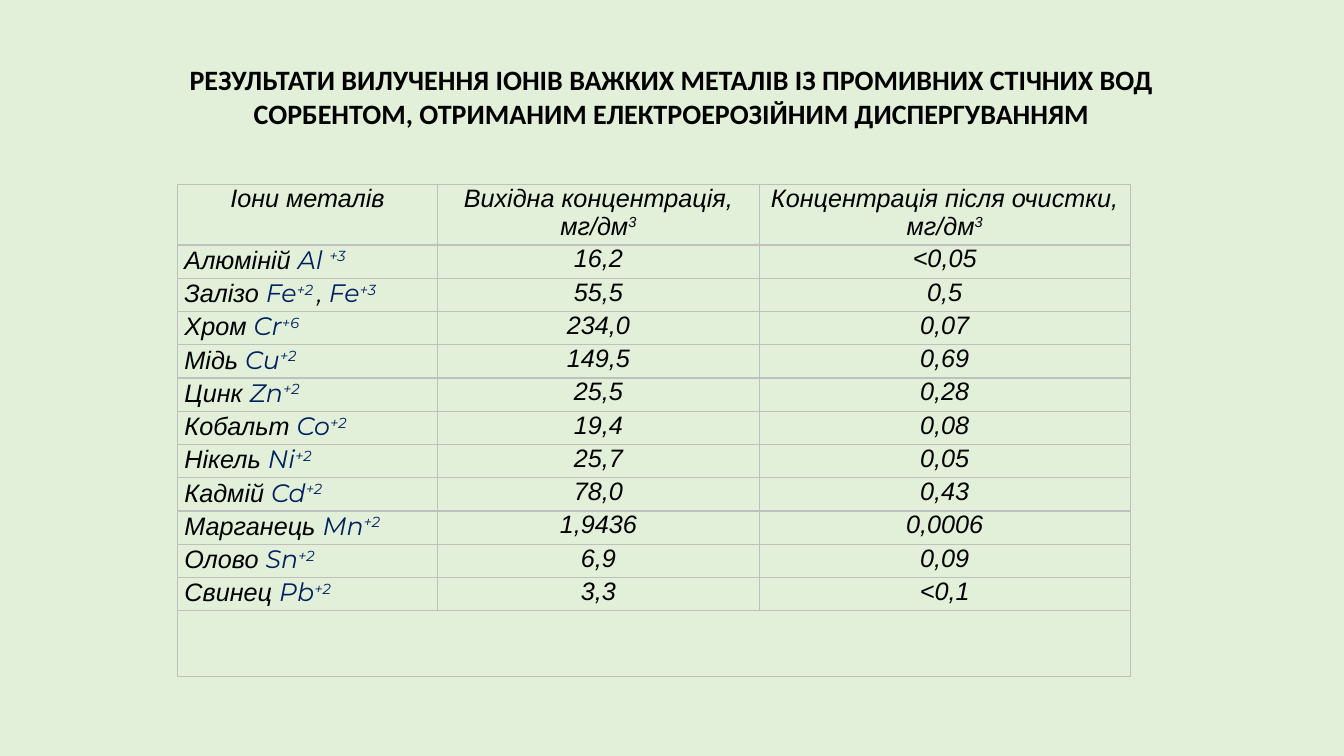
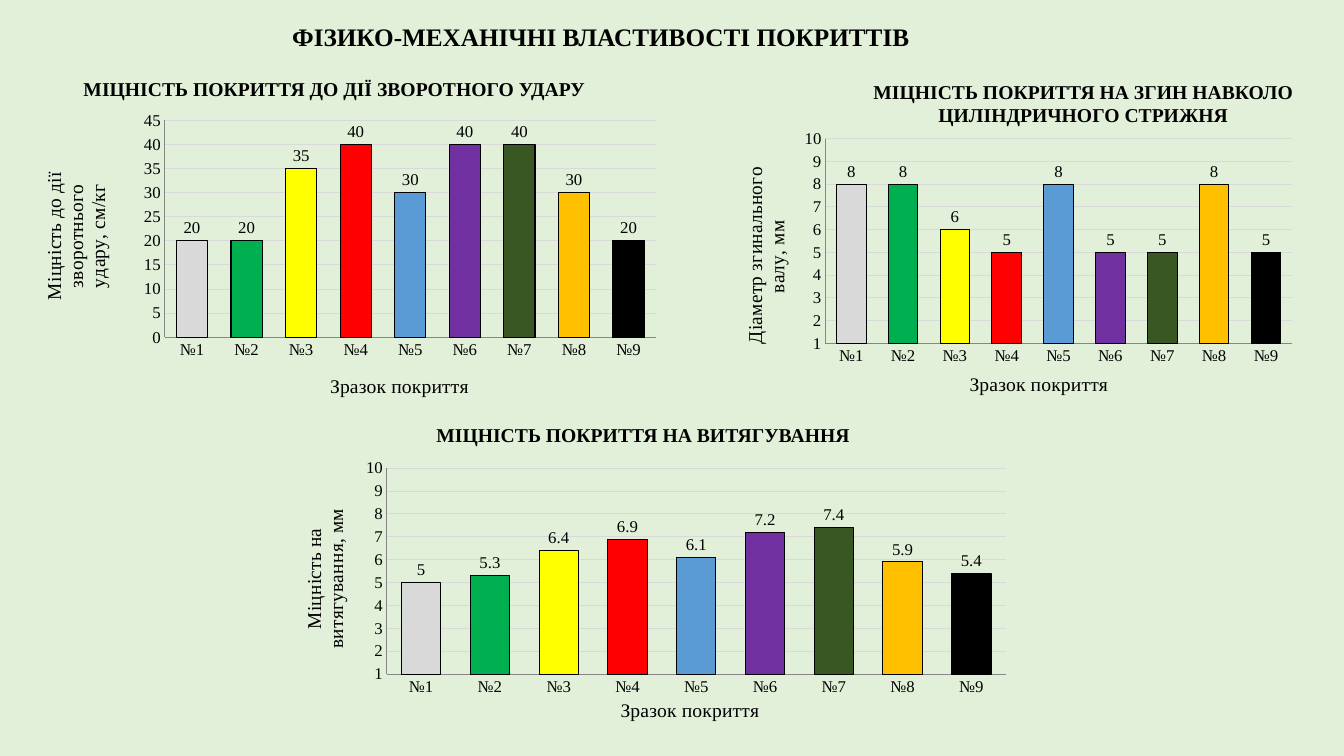
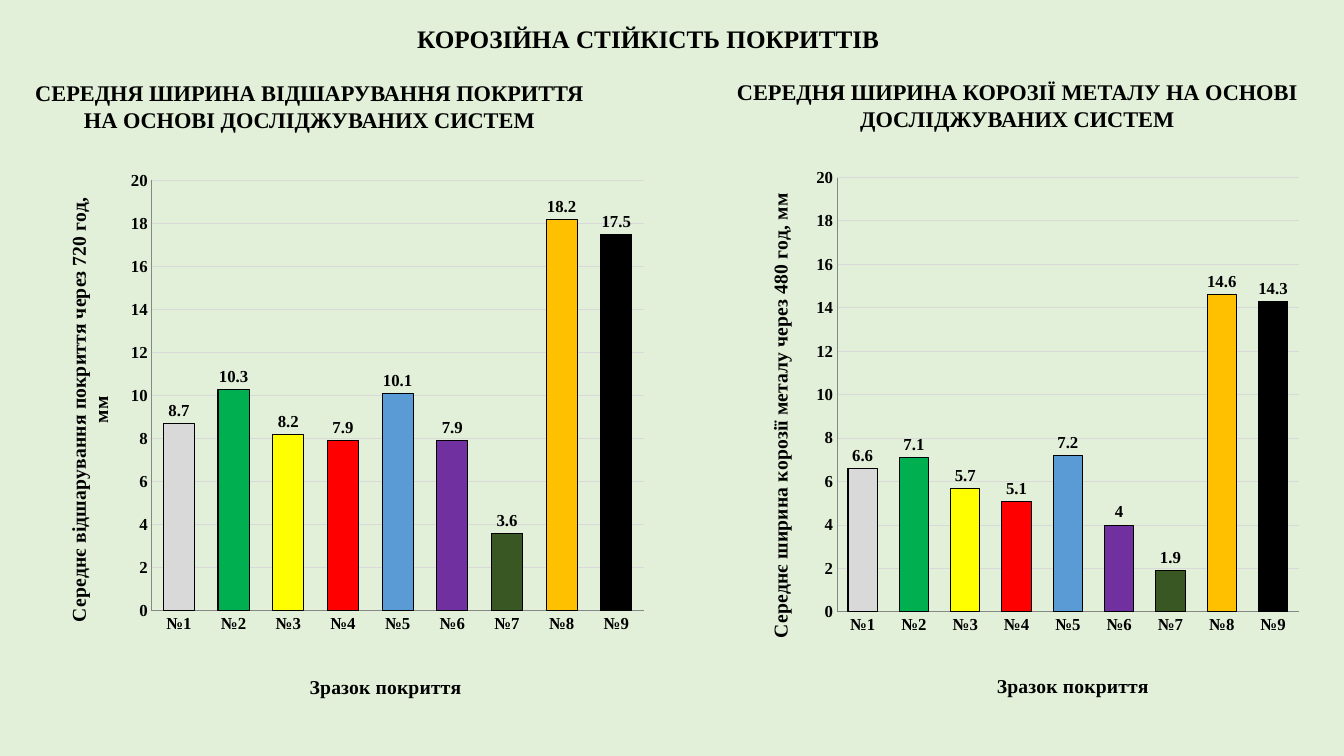
"""Build three slides on sorbent purification and coating properties."""
from dataclasses import dataclass
from typing import Optional

from lxml import etree
from pptx import Presentation
from pptx import util as u
from pptx.chart.data import CategoryChartData
from pptx.dml.color import RGBColor
from pptx.enum import chart as ch, text
from pptx.oxml.ns import qn

COLORS = {
    "back": "E2F0D9",
    "ink": "000000",
    "ion": "002060",
    "border": "BFBFBF",
    "grid": "D9D9D9",
}
SAMPLE_COLORS = {
    "№1": "D9D9D9",
    "№2": "00B050",
    "№3": "FFFF00",
    "№4": "FF0000",
    "№5": "5B9BD5",
    "№6": "7030A0",
    "№7": "385723",
    "№8": "FFC000",
    "№9": "000000",
}
SERIF = "Times New Roman"
CENTER = text.PP_ALIGN.CENTER
LEFT = text.PP_ALIGN.LEFT


@dataclass
class Metal:
    """One table row: a metal, its ions and both concentrations."""
    name: str
    ions: list[tuple[str, str]]
    before: str
    after: str


@dataclass
class Label:
    """A bold text box; lines become paragraphs."""
    box: tuple[float, float, float, float]
    lines: list[str]
    size: int
    align: text.PP_ALIGN = LEFT
    font: str = SERIF


@dataclass
class Bars:
    """A column chart; title places are in slide inches."""
    box: tuple[float, float, float, float]
    values: list[float]
    plot: tuple[float, float, float, float]
    y_title: str
    x_at: tuple[float, float]
    y_at: tuple[float, float]
    top: int
    step: int
    low: Optional[int] = None
    bold: bool = False


METALS = [
    Metal("Алюміній", [("Al ", "+3")], "16,2", "<0,05"),
    Metal("Залізо", [("Fe", "+2 "), ("Fe", "+3")], "55,5", "0,5"),
    Metal("Хром", [("Cr", "+6")], "234,0", "0,07"),
    Metal("Мідь", [("Cu", "+2")], "149,5", "0,69"),
    Metal("Цинк", [("Zn", "+2")], "25,5", "0,28"),
    Metal("Кобальт", [("Co", "+2")], "19,4", "0,08"),
    Metal("Нікель", [("Ni", "+2")], "25,7", "0,05"),
    Metal("Кадмій", [("Cd", "+2")], "78,0", "0,43"),
    Metal("Марганець", [("Mn", "+2")], "1,9436", "0,0006"),
    Metal("Олово", [("Sn", "+2")], "6,9", "0,09"),
    Metal("Свинец", [("Pb", "+2")], "3,3", "<0,1"),
]

TABLE_TITLE = Label(
    (0.97, 0.57, 11.38, 0.77),
    ["РЕЗУЛЬТАТИ ВИЛУЧЕННЯ ІОНІВ ВАЖКИХ МЕТАЛІВ ІЗ ПРОМИВНИХ СТІЧНИХ ВОД",
     "СОРБЕНТОМ, ОТРИМАНИМ ЕЛЕКТРОЕРОЗІЙНИМ ДИСПЕРГУВАННЯМ"],
    20, CENTER, "Calibri")

STRENGTH = [
    Bars((0.23, 1.07, 6.47, 2.93), [20, 20, 35, 40, 30, 40, 40, 30, 20],
         (0.217, 0.043, 0.753, 0.744), "Міцність до дії зворотнього\nудару, см/кг",
         (3.24, 3.7), (0.38, 1.7), 45, 5),
    Label((0.73, 0.71, 6.06, 0.34), ["МІЦНІСТЬ ПОКРИТТЯ ДО ДІЇ ЗВОРОТНОГО УДАРУ"], 14),
    Bars((6.99, 1.24, 6.01, 2.74), [8, 8, 6, 5, 8, 5, 5, 8, 5],
         (0.199, 0.051, 0.77, 0.756), "Діаметр згинального\nвалу, мм",
         (9.58, 3.7), (7.33, 1.67), 10, 1, 1),
    Label((7.06, 0.74, 7.37, 0.57),
          ["МІЦНІСТЬ ПОКРИТТЯ НА ЗГИН НАВКОЛО", "ЦИЛІНДРИЧНОГО СТРИЖНЯ"], 14, CENTER),
    Bars((2.74, 4.51, 7.46, 2.71), [5, 5.3, 6.4, 6.9, 6.1, 7.2, 7.4, 5.9, 5.4],
         (0.147, 0.051, 0.823, 0.77), "Міцність на витягування, мм",
         (6.12, 6.94), (2.95, 5.05), 10, 1, 1),
    Label((4.23, 4.15, 5.34, 0.34), ["МІЦНІСТЬ ПОКРИТТЯ НА ВИТЯГУВАННЯ"], 14),
    Label((2.8, 0.16, 8.04, 0.4), ["ФІЗИКО-МЕХАНІЧНІ ВЛАСТИВОСТІ ПОКРИТТІВ"], 18),
]

CORROSION = [
    Bars((0.23, 1.51, 6.16, 5.51), [8.7, 10.3, 8.2, 7.9, 10.1, 7.9, 3.6, 18.2, 17.5],
         (0.207, 0.051, 0.793, 0.775), "Середнє відшарування покриття через 720 год, мм",
         (3.04, 6.65), (0.62, 1.92), 20, 2, 0, True),
    Label((0.24, 0.74, 5.66, 0.64),
          ["СЕРЕДНЯ ШИРИНА ВІДШАРУВАННЯ ПОКРИТТЯ НА ОСНОВІ ДОСЛІДЖУВАНИХ СИСТЕМ"],
          16, CENTER),
    Bars((7.12, 1.47, 5.94, 5.71), [6.6, 7.1, 5.7, 5.1, 7.2, 4, 1.9, 14.6, 14.3],
         (0.199, 0.051, 0.771, 0.755), "Середнє ширина корозії металу через 480 год, мм",
         (9.85, 6.65), (7.58, 1.88), 20, 2, 0, True),
    Label((7.08, 0.73, 6.02, 0.64),
          ["СЕРЕДНЯ ШИРИНА КОРОЗІЇ МЕТАЛУ НА ОСНОВІ ДОСЛІДЖУВАНИХ СИСТЕМ"], 16, CENTER),
    Label((4.04, 0.18, 8.04, 0.4), ["КОРОЗІЙНА СТІЙКІСТЬ ПОКРИТТІВ"], 18),
]


def rgb(name: str) -> RGBColor:
    """Return a named palette colour."""
    return RGBColor.from_string(COLORS[name])


def set_font(font, size: float, name: str = SERIF, color: str = "ink",
             bold: bool = False, italic: bool = False) -> None:
    """Apply one character format."""
    font.size = u.Pt(size)
    font.name = name
    font.bold = bold
    font.italic = italic
    font.color.rgb = rgb(color)


def write(p, words: str, sup: bool = False, **fmt) -> None:
    """Add a formatted run to a paragraph."""
    r = p.add_run()
    r.text = words
    set_font(r.font, **fmt)
    if sup:
        r._r.get_or_add_rPr().set("baseline", "30000")


def write_lines(tf, lines: list[str], align: text.PP_ALIGN, **fmt) -> None:
    """Fill a text frame with one paragraph per line."""
    for i, line in enumerate(lines):
        p = tf.add_paragraph() if i else tf.paragraphs[0]
        p.alignment = align
        write(p, line, **fmt)


def draw_label(s, label: Label) -> None:
    """Draw a bold text box."""
    tf = s.shapes.add_textbox(*map(u.Inches, label.box)).text_frame
    tf.word_wrap = True
    tf.auto_size = text.MSO_AUTO_SIZE.SHAPE_TO_FIT_TEXT
    write_lines(tf, label.lines, label.align, size=label.size, name=label.font, bold=True)


def set_layout(parent, index: int, **places) -> None:
    """Give a chart part a manual layout."""
    for old in parent.findall(qn("c:layout")):
        parent.remove(old)
    layout = etree.Element(qn("c:layout"))
    manual = etree.SubElement(layout, qn("c:manualLayout"))
    for tag, val in places.items():
        etree.SubElement(manual, qn(f"c:{tag}")).set("val", str(val))
    parent.insert(index, layout)


def style_axis(axis, title: str, at: tuple[float, float], bars: Bars) -> None:
    """Format an axis and place its title."""
    axis.major_tick_mark = axis.minor_tick_mark = ch.XL_TICK_MARK.NONE
    set_font(axis.tick_labels.font, 12, bold=bars.bold)
    write_lines(axis.axis_title.text_frame, title.split("\n"), CENTER, size=14, bold=bars.bold)
    left, top, width, height = bars.box
    set_layout(axis.axis_title.element, 1, xMode="edge", yMode="edge",
               x=round((at[0] - left) / width, 3), y=round((at[1] - top) / height, 3))


def draw_bars(s, bars: Bars) -> None:
    """Draw a column chart with one colour per sample."""
    data = CategoryChartData()
    data.categories = list(SAMPLE_COLORS)
    data.add_series("Series 1", bars.values)
    chart = s.shapes.add_chart(ch.XL_CHART_TYPE.COLUMN_CLUSTERED,
                               *map(u.Inches, bars.box), data).chart
    chart.has_title = chart.has_legend = False
    set_font(chart.font, 10, "Calibri")
    style_axis(chart.category_axis, "Зразок покриття", bars.x_at, bars)

    axis = chart.value_axis
    style_axis(axis, bars.y_title, bars.y_at, bars)
    body = axis.axis_title.element.find(".//" + qn("a:bodyPr"))
    body.set("rot", "-5400000")
    body.set("vert", "horz")
    axis.minimum_scale, axis.maximum_scale = bars.low, bars.top
    axis.major_unit = bars.step
    grid = axis.major_gridlines.format.line
    grid.color.rgb = rgb("grid")
    grid.width = u.Pt(0.75)

    plot = chart.plots[0]
    plot.gap_width = 75
    plot.vary_by_categories = False
    plot.has_data_labels = True
    labels = plot.data_labels
    labels.show_value = True
    labels.position = ch.XL_LABEL_POSITION.OUTSIDE_END
    set_font(labels.font, 12, bold=bars.bold)
    series = plot.series[0]
    series.invert_if_negative = False
    for i, color in enumerate(SAMPLE_COLORS.values()):
        fmt = series.points[i].format
        fmt.fill.solid()
        fmt.fill.fore_color.rgb = RGBColor.from_string(color)
        fmt.line.color.rgb = rgb("ink")
        fmt.line.width = u.Pt(0.75)

    x, y, w, h = bars.plot
    set_layout(chart.element.find(".//" + qn("c:plotArea")), 0, layoutTarget="inner",
               xMode="edge", yMode="edge", x=x, y=y, w=w, h=h)


def style_cell(cell) -> None:
    """Clear a cell's fill, set its margins and outline it."""
    cell.margin_left = cell.margin_right = u.Inches(0.07)
    cell.margin_top = cell.margin_bottom = 0
    cell.fill.background()
    props = cell._tc.get_or_add_tcPr()
    for i, side in enumerate("LRTB"):
        ln = etree.Element(qn(f"a:ln{side}"), w=str(u.Pt(1)))
        fill = etree.SubElement(ln, qn("a:solidFill"))
        etree.SubElement(fill, qn("a:srgbClr")).set("val", COLORS["border"])
        props.insert(i, ln)


def draw_metals(s) -> None:
    """Draw the table of metal ion concentrations."""
    widths = [2.58, 3.19, 3.68]
    heights = [0.6] + [0.33] * len(METALS) + [0.65]
    table = s.shapes.add_table(len(heights), len(widths), u.Inches(1.76), u.Inches(1.83),
                               u.Inches(sum(widths)), u.Inches(sum(heights))).table
    table.first_row = table.horz_banding = False
    for col, width in zip(table.columns, widths):
        col.width = u.Inches(width)
    for row, height in zip(table.rows, heights):
        row.height = u.Inches(height)
    for cell in table.iter_cells():
        style_cell(cell)

    arial = {"size": 18, "name": "Arial", "italic": True}
    ion_font = {"size": 18, "name": "Montserrat", "italic": True}
    heads = ["Іони металів", "Вихідна концентрація, мг/дм", "Концентрація після очистки, мг/дм"]
    for i, head in enumerate(heads):
        tf = table.cell(0, i).text_frame
        write_lines(tf, [head], CENTER, **arial)
        if i:
            write(tf.paragraphs[0], "3", sup=True, **arial)
    for i, metal in enumerate(METALS, 1):
        p = table.cell(i, 0).text_frame.paragraphs[0]
        write(p, metal.name + " ", **arial)
        for j, (symbol, charge) in enumerate(metal.ions):
            if j:
                write(p, ", ", **ion_font)
            write(p, symbol, color="ion", **ion_font)
            write(p, charge, sup=True, color="ion", **ion_font)
        for j, value in enumerate((metal.before, metal.after), 1):
            write_lines(table.cell(i, j).text_frame, [value], CENTER, **arial)
    last = len(heights) - 1
    table.cell(last, 0).merge(table.cell(last, 2))


def main() -> None:
    """Build and save the presentation."""
    prs = Presentation()
    prs.slide_width, prs.slide_height = u.Inches(13.33), u.Inches(7.5)
    back = prs.slide_master.background.fill
    back.solid()
    back.fore_color.rgb = rgb("back")
    blank = prs.slide_layouts[6]

    s = prs.slides.add_slide(blank)
    draw_label(s, TABLE_TITLE)
    draw_metals(s)
    for items in (STRENGTH, CORROSION):
        s = prs.slides.add_slide(blank)
        for item in items:
            if isinstance(item, Bars):
                draw_bars(s, item)
            else:
                draw_label(s, item)
    prs.save("out.pptx")


if __name__ == "__main__":
    main()
